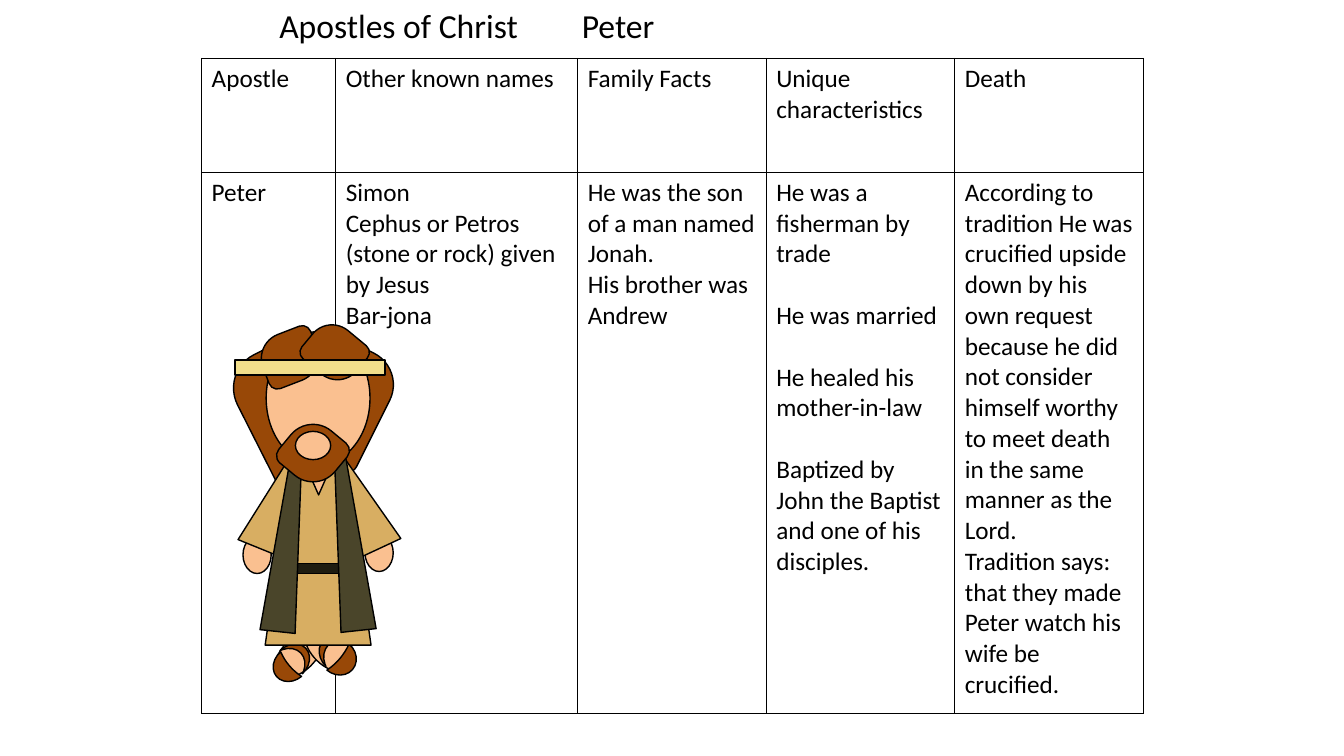
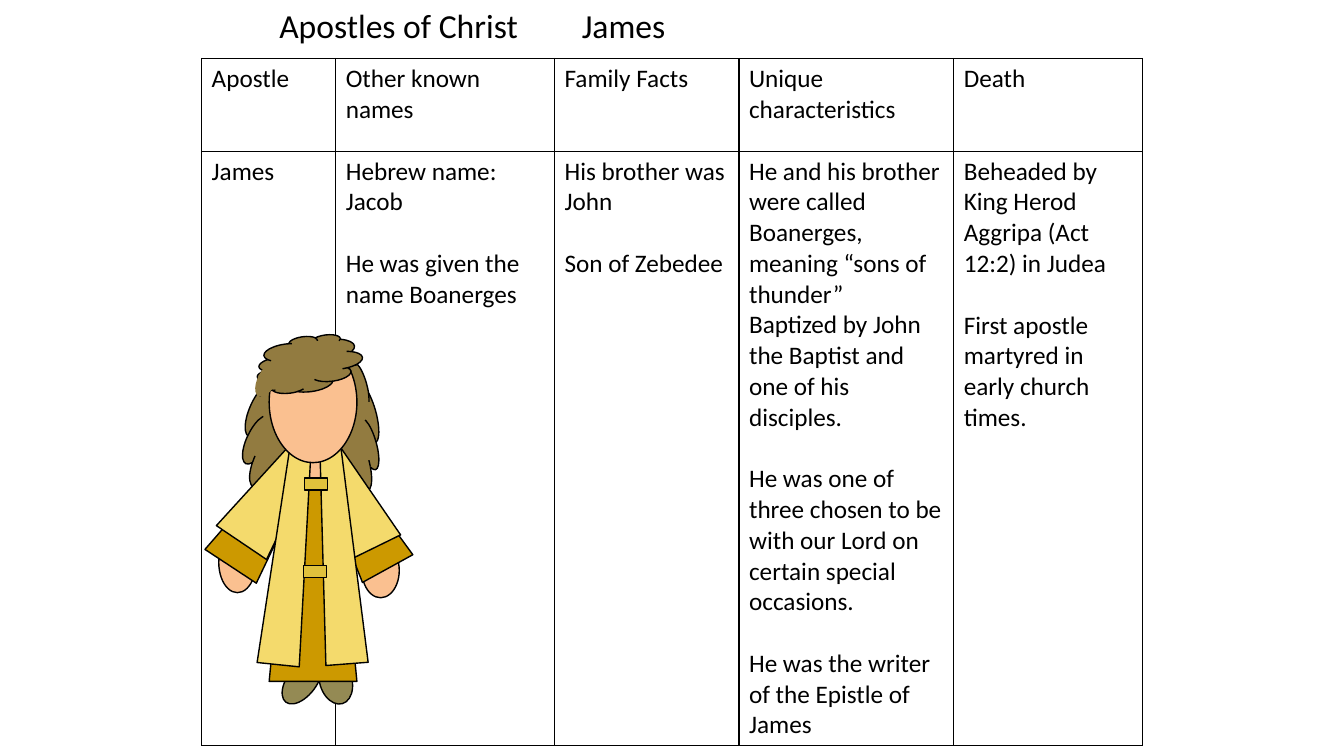
"""Build two slides about the apostles Peter and James, each with a fact table and a figure."""
import pptx
import pptx.dml.color
import pptx.enum.shapes
import pptx.enum.text
import pptx.oxml
import pptx.oxml.ns
import pptx.util

Inches = pptx.util.Inches
Pt = pptx.util.Pt
MSO = pptx.enum.shapes.MSO_SHAPE

FONT = "Calibri"
BODY_SIZE = 18
BLANK_LINE = 22
COLORS = {
    "ink": "000000",
    "skin": "FAC090",
    "brown": "984807",
    "tan": "D8AE62",
    "belt": "1E1C11",
    "stole": "4A452A",
    "headband": "F1DE8B",
    "hair": "927B40",
    "shoe": "948A54",
    "robe": "CC9900",
    "coat": "F4DA6C",
    "clasp": "E0C13C",
}
HEADERS = ["Apostle", "Other known names", "Family Facts", "Unique characteristics", "Death"]

DIAG = MSO.ROUND_2_DIAG_RECTANGLE
OVAL, MOON, RECT = MSO.OVAL, MSO.MOON, MSO.RECTANGLE
TRAP, TRI, CLOUD = MSO.TRAPEZOID, MSO.ISOSCELES_TRIANGLE, MSO.CLOUD
CURL = [0.17, 0.5]
SLANT = [0.34]

# Part: shape, colour, left, top, width, height, rotation, flipped, adjustments
PETER_PARTS = [
    (DIAG, "brown", 3.09, 3.44, 0.7, 1.2, 206.6, False, CURL),
    (DIAG, "brown", 2.44, 3.45, 0.74, 1.29, 333.2, True, [0, 0.5]),
    (OVAL, "skin", 2.64, 3.29, 1.03, 1.32, 0, False, []),
    (OVAL, "skin", 2.8, 6.2, 0.33, 0.58, 45.9, False, []),
    (MOON, "brown", 2.72, 6.49, 0.19, 0.32, 319.7, False, [0.88]),
    (MOON, "brown", 2.86, 6.34, 0.2, 0.32, 135.9, False, [0.34]),
    (OVAL, "skin", 3.09, 6.13, 0.36, 0.59, 314.1, True, []),
    (MOON, "brown", 3.33, 6.41, 0.19, 0.34, 40.3, True, [0.88]),
    (MOON, "brown", 3.18, 6.25, 0.2, 0.34, 224.1, True, [0.34]),
    (OVAL, "skin", 3.62, 5.3, 0.28, 0.37, 0, False, []),
    (OVAL, "skin", 2.41, 5.32, 0.28, 0.37, 0, False, []),
    (TRAP, "tan", 3.31, 4.55, 0.49, 0.94, 335, False, SLANT),
    (TRAP, "tan", 2.52, 4.54, 0.49, 0.94, 22.1, False, SLANT),
    (TRAP, "tan", 2.63, 4.57, 1.05, 1.83, 0, False, []),
    (TRI, "skin", 3.01, 4.57, 0.3, 0.34, 180, False, []),
    (RECT, "belt", 2.78, 5.59, 0.75, 0.1, 0, False, []),
    (TRAP, "stole", 2.67, 4.55, 0.35, 1.72, 6.1, True, SLANT),
    (TRAP, "stole", 3.29, 4.54, 0.35, 1.72, 353.9, False, SLANT),
    (DIAG, "brown", 2.62, 3.26, 0.51, 0.57, 248.9, False, CURL),
    (DIAG, "brown", 3.07, 3.21, 0.5, 0.57, 309.6, False, CURL),
    (DIAG, "brown", 2.82, 4.21, 0.57, 0.57, 309.6, False, CURL),
    (OVAL, "skin", 2.93, 4.28, 0.35, 0.28, 0, False, []),
    (RECT, "headband", 2.33, 3.57, 1.49, 0.15, 0, False, []),
]
JAMES_PARTS = [
    (CLOUD, "hair", 2.45, 3.47, 0.76, 1.43, 25.3, True, []),
    (CLOUD, "hair", 3.15, 3.45, 0.59, 1.44, 344.3, False, []),
    (OVAL, "skin", 3.59, 5.39, 0.37, 0.54, 0, False, []),
    (OVAL, "skin", 2.17, 5.28, 0.37, 0.6, 0, False, []),
    (OVAL, "shoe", 2.85, 6.49, 0.29, 0.53, 37.1, False, []),
    (OVAL, "shoe", 3.17, 6.52, 0.32, 0.47, 343.7, False, []),
    (TRAP, "robe", 2.29, 4.59, 0.61, 1.12, 33.3, False, []),
    (TRAP, "coat", 2.38, 4.45, 0.6, 1.02, 34, False, []),
    (TRAP, "robe", 3.29, 4.59, 0.57, 1.12, 331.2, False, []),
    (TRAP, "coat", 3.18, 4.47, 0.6, 1.02, 333.9, False, []),
    (TRAP, "robe", 2.67, 4.5, 0.87, 2.26, 0, False, []),
    (OVAL, "skin", 2.91, 4.32, 0.36, 0.47, 0, False, []),
    (TRAP, "coat", 3.15, 4.46, 0.42, 2.13, 355.6, False, []),
    (TRAP, "coat", 2.66, 4.44, 0.42, 2.16, 5.9, False, []),
    (OVAL, "skin", 2.67, 3.39, 0.87, 1.2, 0, False, []),
    (RECT, "clasp", 3.02, 4.74, 0.23, 0.12, 0, False, []),
    (RECT, "clasp", 3.01, 5.61, 0.23, 0.12, 0, False, []),
    (CLOUD, "hair", 2.79, 3.08, 0.55, 1.06, 262.4, True, []),
    (OVAL, "hair", 2.47, 3.68, 0.36, 0.17, 297.2, False, []),
]

# Each fact cell is a list of blocks, and each block a list of paragraphs
APOSTLES = [
    {
        "name": "Peter",
        "cols": [1.33, 2.4, 1.87, 1.87, 1.87],
        "rows": [1.13, 5.37],
        "facts": [
            [["Simon", "Cephus or Petros (stone or rock) given by Jesus", "Bar-jona"]],
            [["He was the son of a man named Jonah.", "His brother was Andrew"]],
            [
                ["He was a fisherman by trade"],
                ["He was married"],
                ["He healed his mother-in-law"],
                ["Baptized by John the Baptist and one of his disciples."],
            ],
            [[
                "According to tradition He was crucified upside down by his own request because "
                "he did not consider himself worthy to meet death in the same manner as the Lord.",
                "Tradition says: that they made Peter watch his wife be crucified.",
            ]],
        ],
        "parts": PETER_PARTS,
    },
    {
        "name": "James",
        "cols": [1.33, 2.17, 1.83, 2.13, 1.87],
        "rows": [0.92, 5.37],
        "facts": [
            [["Hebrew name: Jacob"], ["He was given the name Boanerges"]],
            [["His brother was John"], ["Son of Zebedee"]],
            [
                [
                    "He and his brother were called Boanerges, meaning “sons of thunder”",
                    "Baptized by John the Baptist and one of his disciples.",
                ],
                ["He was one of three chosen to be with our Lord on certain special occasions."],
                ["He was the writer of the Epistle of James"],
            ],
            [
                ["Beheaded by King Herod Aggripa (Act 12:2) in Judea"],
                ["First apostle martyred in early church times."],
            ],
        ],
        "parts": JAMES_PARTS,
    },
]


def rgb(name):
    return pptx.dml.color.RGBColor.from_string(COLORS[name])


def add_run(p, text, size):
    r = p.add_run()
    r.text = text
    r.font.name = FONT
    r.font.size = Pt(size)
    r.font.color.rgb = rgb("ink")


prs = pptx.Presentation()
prs.slide_width, prs.slide_height = Inches(13.33), Inches(7.5)

for apostle in APOSTLES:
    s = prs.slides.add_slide(prs.slide_layouts[5])

    title = s.shapes.title
    title.left, title.top = Inches(2.67), Inches(0)
    title.width, title.height = Inches(7.25), Inches(0.5)
    tf = title.text_frame
    tf.word_wrap = True
    tf.auto_size = pptx.enum.text.MSO_AUTO_SIZE.NONE
    tf.vertical_anchor = pptx.enum.text.MSO_ANCHOR.TOP
    p = tf.paragraphs[0]
    p.alignment = pptx.enum.text.PP_ALIGN.LEFT
    add_run(p, f"Apostles of Christ\t\t{apostle['name']}", 24)

    cols, rows = apostle["cols"], apostle["rows"]
    table = s.shapes.add_table(
        len(rows), len(cols), Inches(2), Inches(0.58), Inches(sum(cols)), Inches(sum(rows))
    ).table
    table.first_row = table.horz_banding = False
    for column, width in zip(table.columns, cols):
        column.width = Inches(width)
    for row, height in zip(table.rows, rows):
        row.height = Inches(height)

    grid = [[[[header]] for header in HEADERS], [[[apostle["name"]]]] + apostle["facts"]]
    for i, row in enumerate(grid):
        for j, blocks in enumerate(row):
            cell = table.cell(i, j)
            tcPr = cell._tc.get_or_add_tcPr()
            for side in ("lnL", "lnR", "lnT", "lnB"):
                tcPr.append(pptx.oxml.parse_xml(
                    f'<a:{side} {pptx.oxml.ns.nsdecls("a")} w="{Pt(1)}"><a:solidFill>'
                    f'<a:srgbClr val="{COLORS["ink"]}"/></a:solidFill></a:{side}>'
                ))
            cell.fill.background()
            p = cell.text_frame.paragraphs[0]
            for b, block in enumerate(blocks):
                for k, text in enumerate(block):
                    if b or k:
                        p = cell.text_frame.add_paragraph()
                    if b and k == 0:
                        p.space_before = Pt(BLANK_LINE)
                    add_run(p, text, BODY_SIZE)

    figure = s.shapes.add_group_shape()
    for kind, color, left, top, width, height, rotation, flipped, adjustments in apostle["parts"]:
        sp = figure.shapes.add_shape(kind, Inches(left), Inches(top), Inches(width), Inches(height))
        sp.shadow.inherit = False
        sp.rotation = rotation
        if flipped:
            sp.element.spPr.xfrm.set("flipH", "1")
        for n, value in enumerate(adjustments):
            sp.adjustments[n] = value
        sp.fill.solid()
        sp.fill.fore_color.rgb = rgb(color)
        sp.line.color.rgb = rgb("ink")
        sp.line.width = Pt(1)
    if apostle["name"] == "James":
        sp.line.color.rgb = rgb("hair")

prs.save("out.pptx")
